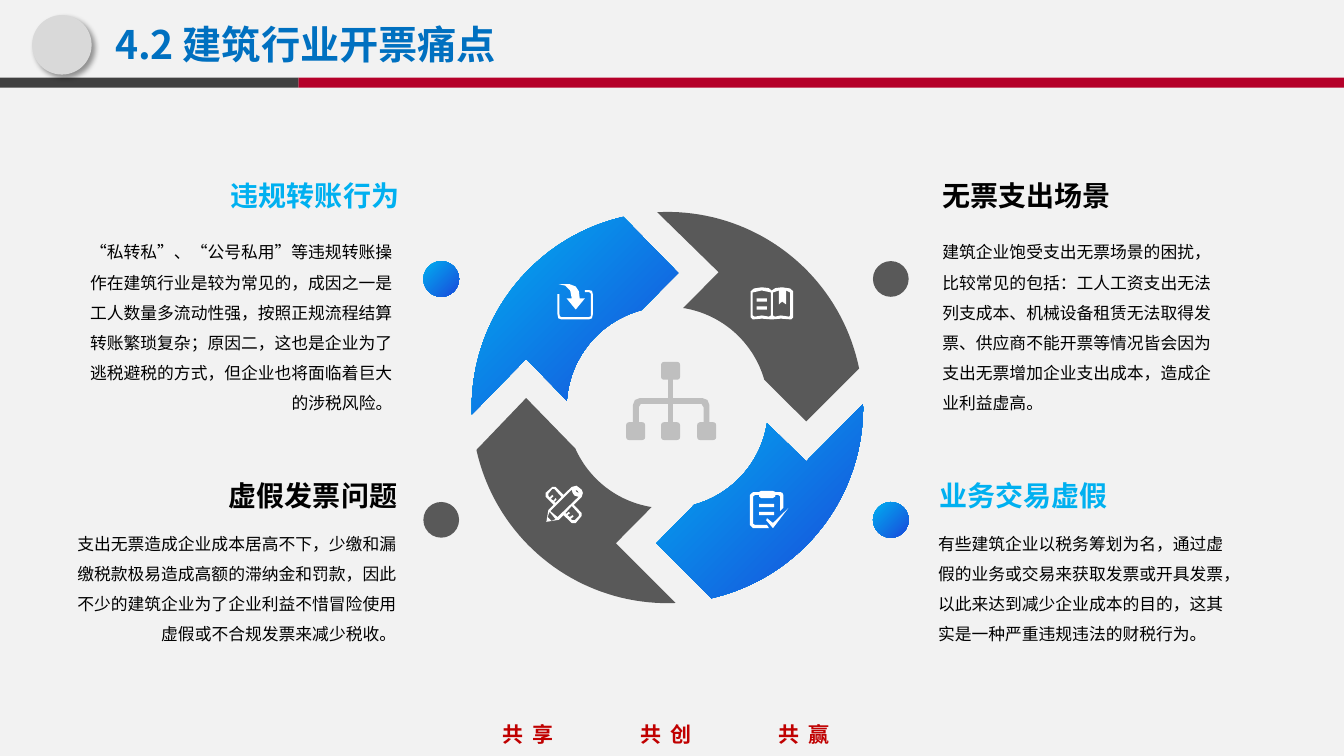
from math import cos, radians, sin

from lxml.etree import SubElement
from pptx import Presentation
from pptx.dml.color import RGBColor
from pptx.enum.shapes import MSO_CONNECTOR, MSO_SHAPE
from pptx.enum.text import MSO_ANCHOR, PP_ALIGN
from pptx.oxml.ns import qn
from pptx.util import Cm, Pt

PAPER = RGBColor(0xF2, 0xF2, 0xF2)
RED = RGBColor(0xB5, 0x00, 0x29)
DARK = RGBColor(0x40, 0x40, 0x40)
GRAY = RGBColor(0x59, 0x59, 0x59)
SILVER = RGBColor(0xBF, 0xBF, 0xBF)
PALE = RGBColor(0xD9, 0xD9, 0xD9)
WHITE = RGBColor(0xFF, 0xFF, 0xFF)
BLACK = RGBColor(0, 0, 0)
NAVY = RGBColor(0x00, 0x70, 0xC0)
SKY = RGBColor(0x00, 0xB0, 0xF0)
ROYAL = RGBColor(0x1A, 0x48, 0xDB)
WINE = RGBColor(0xC0, 0x00, 0x00)
BLEND = (SKY, ROYAL)
HEAD, BODY = "Noto Sans CJK SC", "DejaVu Sans"
HUB, OUTER, INNER = (16.82, 10.27), 4.93, 2.54


def box(x, y, right, low):
    return [(x, y), (right, y), (right, low), (x, low)]


def arc(radius, start, end, steps=40):
    turns = [radians(start + (end - start) * i / steps) for i in range(steps + 1)]
    return [(HUB[0] + radius * cos(t), HUB[1] + radius * sin(t)) for t in turns]


class Deck:
    def __init__(self):
        self.file = Presentation()
        self.file.slide_width, self.file.slide_height = Cm(33.87), Cm(19.05)
        self.slide = self.file.slides.add_slide(self.file.slide_layouts[5])
        self.shapes = self.slide.shapes
        fill = self.slide.background.fill
        fill.solid()
        fill.fore_color.rgb = PAPER

    def paint(self, shape, color):
        shape.shadow.inherit = False
        shape.line.fill.background()
        if color is BLEND:
            shape.fill.gradient()
            shape.fill.gradient_angle = 315
            for stop, tone, place in zip(shape.fill.gradient_stops, BLEND, (0, 1)):
                stop.color.rgb, stop.position = tone, place
        else:
            shape.fill.solid()
            shape.fill.fore_color.rgb = color
        return shape

    def shape(self, kind, x, y, w, h, color):
        return self.paint(self.shapes.add_shape(kind, Cm(x), Cm(y), Cm(w), Cm(h)), color)

    def shade(self, shape):
        glow = SubElement(shape._element.spPr.find(qn("a:effectLst")), qn("a:outerShdw"),
                          blurRad=str(Pt(4)), dist=str(Pt(3)), dir="2700000", algn="tl")
        tint = SubElement(glow, qn("a:srgbClr"), val="000000")
        SubElement(tint, qn("a:alpha"), val="40000")

    def draw(self, color, loops, x=0, y=0, unit=1.0):
        """Fill closed outlines; inner ones cut holes."""
        path = None
        for loop in loops:
            first, *rest = [(Cm(x + a * unit), Cm(y + b * unit)) for a, b in loop]
            if path is None:
                path = self.shapes.build_freeform(*first)
            else:
                path.move_to(*first)
            path.add_line_segments(rest, close=True)
        return self.paint(path.convert_to_shape(), color)

    def line(self, x, top, low, color, width):
        line = self.shapes.add_connector(MSO_CONNECTOR.STRAIGHT, Cm(x), Cm(top), Cm(x), Cm(low))
        line.line.color.rgb, line.line.width = color, Pt(width)
        SubElement(line._element.spPr, qn("a:effectLst"))

    def style(self, par, font, size, color, bold):
        for run in par.runs:
            run.font.name, run.font.size, run.font.bold = font, Pt(size), bold
            run.font.color.rgb = color
            SubElement(run.font._element, qn("a:ea"), typeface=HEAD)

    def title(self, text, x, y, w, h):
        title = self.shapes.title
        title.left, title.top, title.width, title.height = Cm(x), Cm(y), Cm(w), Cm(h)
        frame = title.text_frame
        frame.text = text
        frame.vertical_anchor = MSO_ANCHOR.MIDDLE
        frame.margin_left = frame.margin_right = Cm(0.18)
        frame.margin_top = frame.margin_bottom = Cm(0.1)
        frame.paragraphs[0].alignment = PP_ALIGN.LEFT
        self.style(frame.paragraphs[0], HEAD, 28, NAVY, True)

    def text(self, text, x, y, w, h, size=12, color=BLACK, bold=False,
             font=BODY, align=PP_ALIGN.LEFT, space=1.0):
        frame = self.shapes.add_textbox(Cm(x), Cm(y), Cm(w), Cm(h)).text_frame
        frame.word_wrap = True
        par = frame.paragraphs[0]
        par.text, par.alignment, par.line_spacing = text, align, space
        self.style(par, font, size, color, bold)
        return par

    def motto(self, words, x, y, w, h, step):
        par = self.text("\t".join(words), x, y, w, h, 15, WINE, True, HEAD)
        tabs = SubElement(par._p.get_or_add_pPr(), qn("a:tabLst"))
        for i in range(1, len(words)):
            SubElement(tabs, qn("a:tab"), pos=str(Cm(step * i)), algn="l")
        for run in par.runs:
            run.font._element.set("spc", "600")


# Icon outlines, in hundredths of a centimetre
TRAY = [
    [(69, 15), (79, 15), (87, 17), (89, 25), (89, 76), (87, 86), (79, 89), (10, 89), (2, 86),
     (0, 76), (0, 25), (5, 25), (5, 76), (6, 81), (10, 83), (79, 83), (84, 81), (84, 25),
     (83, 22), (79, 20), (69, 20)],
    [(36, 36), (23, 36), (46, 64), (69, 36), (56, 36), (54, 18), (46, 6), (30, 0), (3, 0),
     (20, 4), (32, 16)]]
BOOK = [
    [(107, 10), (107, 76), (102, 81), (76, 79), (53, 81), (28, 79), (5, 81), (0, 76), (0, 10),
     (8, 3), (28, 0), (45, 2), (53, 8), (62, 2), (79, 0), (99, 3)],
    [(51, 13), (28, 8), (5, 13), (5, 71), (10, 74), (28, 71), (46, 74), (51, 71)],
    [(99, 13), (89, 8), (89, 43), (79, 36), (71, 43), (71, 8), (56, 13), (56, 71), (61, 74),
     (76, 71), (97, 74), (99, 71)],
    box(15, 28, 41, 36), box(15, 48, 41, 56)]
CLIP = [
    [(23, 3), (28, 0), (58, 0), (64, 3), (76, 3), (82, 5), (84, 10), (84, 43), (76, 51),
     (76, 14), (71, 10), (64, 10), (64, 14), (58, 18), (28, 18), (23, 14), (23, 10), (13, 10),
     (8, 14), (8, 83), (13, 86), (43, 86), (48, 94), (8, 94), (0, 86), (0, 10), (8, 3)],
    [(43, 69), (58, 81), (97, 43), (58, 94), (41, 74)],
    box(23, 33, 61, 41), box(23, 53, 61, 61)]
TOOLS = [
    [(94, 28), (74, 48), (94, 69), (94, 76), (79, 94), (69, 94), (48, 74), (36, 86), (5, 91),
     (10, 61), (23, 48), (3, 28), (3, 18), (20, 3), (28, 3), (48, 23), (69, 3), (81, 0),
     (94, 10), (97, 18)],
    [(56, 71), (61, 66), (65, 69), (58, 74), (64, 79), (71, 74), (74, 77), (66, 84), (71, 87),
     (76, 87), (87, 76), (87, 71), (69, 51), (53, 69)],
    [(8, 79), (18, 89), (28, 84), (13, 66)],
    [(25, 8), (20, 8), (10, 20), (10, 25), (13, 30), (20, 23), (23, 26), (16, 33), (23, 38),
     (28, 31), (31, 34), (25, 41), (28, 43), (43, 28)],
    [(71, 18), (69, 10), (15, 64), (33, 79), (86, 28), (76, 25)],
    [(84, 13), (78, 10), (81, 16), (87, 18)]]
FORK = [[(0, 61), (0, 18), (5, 5), (18, 0), (175, 0), (188, 5), (193, 18), (193, 61), (178, 61),
         (178, 23), (173, 15), (20, 15), (15, 23), (15, 61)]]

# Ring arrows: fill, outer sweep, tip, inner sweep, notch, icon, icon place
ARROWS = [
    (BLEND, (178, 257), (17.09, 6.88), (255, 184), (13.26, 9.04), TRAY, (14.05, 7.16)),
    (GRAY, (267, 348.5), (20.32, 10.62), (344, 279), (18.11, 6.86), BOOK, (18.92, 7.24)),
    (BLEND, (359, 437), (16.54, 13.69), (434.5, 369), (20.32, 11.63), CLIP, (18.9, 12.37)),
    (GRAY, (87.6, 167.5), (13.26, 10.03), (156, 99), (15.52, 13.69), TOOLS, (13.72, 12.24))]

# Topics: heading, its colour, font, place; body, its box; dot fill, dot place
LEFT, RIGHT = PP_ALIGN.LEFT, PP_ALIGN.RIGHT
TOPICS = [
    ("违规转账行为", SKY, HEAD, (2.79, 4.37),
     "“私转私”、“公号私用”等违规转账操作在建筑行业是较为常见的，成因之一是工人数量多流动性强，按照正规流程结算"
     "转账繁琐复杂；原因二，这也是企业为了逃税避税的方式，但企业也将面临着巨大的涉税风险。",
     (1.68, 5.72, 8.46, 4.88), RIGHT, BLEND, (10.67, 6.58)),
    ("虚假发票问题", BLACK, BODY, (2.74, 11.94),
     "支出无票造成企业成本居高不下，少缴和漏缴税款极易造成高额的滞纳金和罚款，因此不少的建筑企业为了企业利益"
     "不惜冒险使用虚假或不合规发票来减少税收。",
     (1.55, 13.06, 8.69, 3.33), RIGHT, GRAY, (10.67, 12.65)),
    ("业务交易虚假", SKY, HEAD, (23.42, 11.94),
     "有些建筑企业以税务筹划为名，通过虚假的业务或交易来获取发票或开具发票，以此来达到减少企业成本的目的，"
     "这其实是一种严重违规违法的财税行为。",
     (23.39, 13.06, 8.1, 3.33), LEFT, BLEND, (22, 12.65)),
    ("无票支出场景", BLACK, BODY, (23.5, 4.37),
     "建筑企业饱受支出无票场景的困扰，比较常见的包括：工人工资支出无法列支成本、机械设备租赁无法取得发票、"
     "供应商不能开票等情况皆会因为支出无票增加企业支出成本，造成企业利益虚高。",
     (23.5, 5.72, 7.52, 4.88), LEFT, GRAY, (22, 6.58))]


def main():
    deck = Deck()

    # Header and footer
    deck.motto(("共享", "共创", "共赢"), 12.42, 18.06, 9.9, 0.89, 3.48)
    deck.shape(MSO_SHAPE.RECTANGLE, 7.52, 1.96, 26.35, 0.25, RED)
    deck.shape(MSO_SHAPE.RECTANGLE, 0, 1.96, 7.52, 0.25, DARK)
    deck.shade(deck.shape(MSO_SHAPE.OVAL, 0.81, 0.38, 1.5, 1.5, PALE))
    deck.title("4.2 建筑行业开票痛点", 2.72, 0.3, 25.22, 1.6)

    # Ring of arrows with icons
    for fill, out, tip, back, notch, icon, place in ARROWS:
        deck.draw(fill, [arc(OUTER, *out) + [tip] + arc(INNER, *back) + [notch]])
        deck.draw(WHITE, icon, *place, unit=0.01)

    # Tree in the hub
    deck.draw(SILVER, FORK, 15.95, 10.03, 0.01)
    deck.line(16.9, 9.5, 10.7, SILVER, 4)
    for x, y in ((16.66, 9.12), (15.78, 10.64), (16.66, 10.64), (17.57, 10.64)):
        deck.shape(MSO_SHAPE.ROUNDED_RECTANGLE, x, y, 0.48, 0.45, SILVER)

    # Topics around the ring
    for head, color, font, place, body, area, align, fill, dot in TOPICS:
        deck.shape(MSO_SHAPE.OVAL, *dot, 0.9, 0.9, fill)
        deck.text(head, *place, 7.52, 1.12, 20, color, True, font, align)
        deck.text(body, *area, align=align, space=1.5)

    deck.file.save("out.pptx")


if __name__ == "__main__":
    main()
